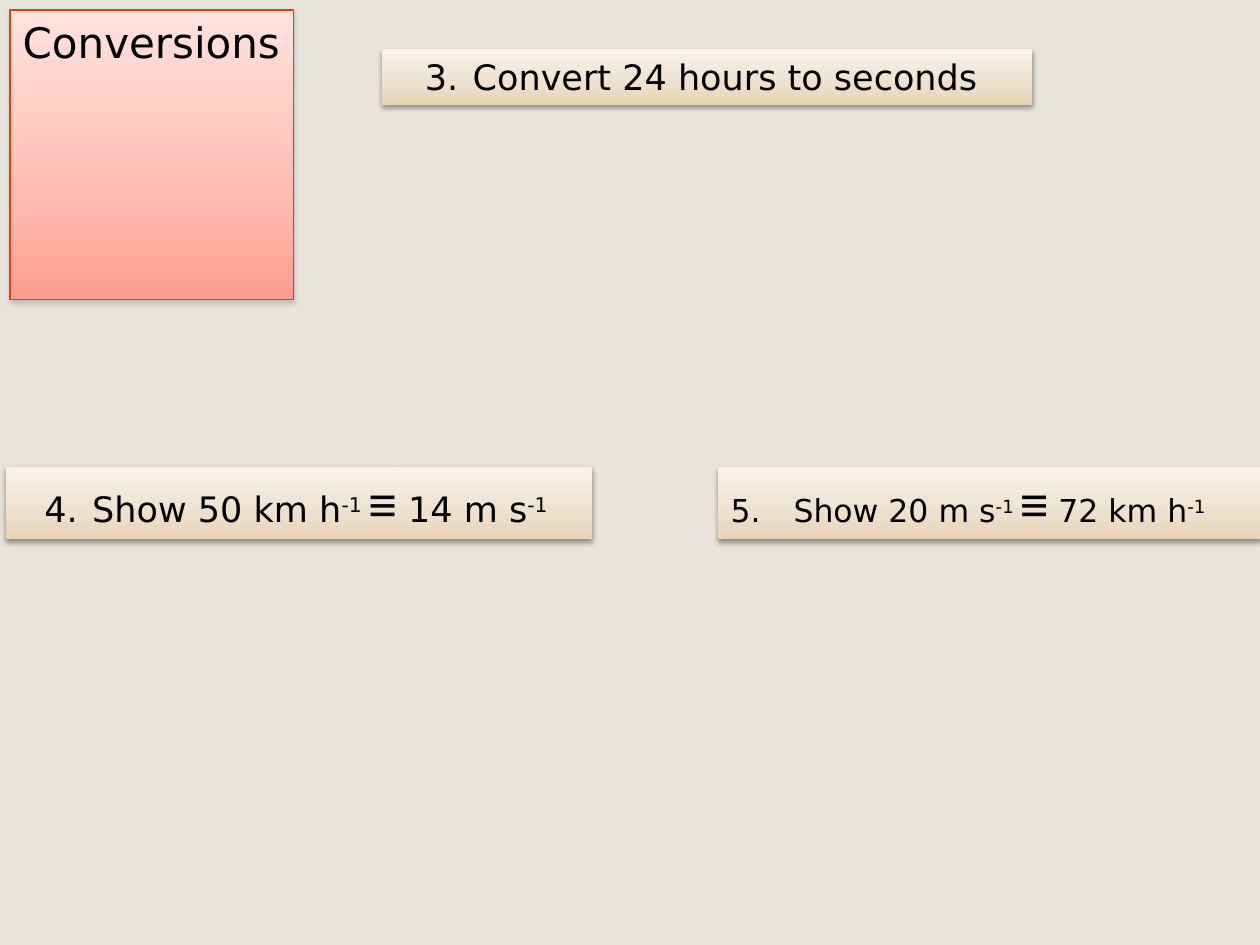
import lxml.etree
import pptx
import pptx.dml.color
import pptx.enum.text
import pptx.oxml.ns
import pptx.util

Inches = pptx.util.Inches
Pt = pptx.util.Pt
Color = pptx.dml.color.RGBColor
Align = pptx.enum.text.PP_ALIGN
Size = pptx.enum.text.MSO_AUTO_SIZE
qn = pptx.oxml.ns.qn

SAND = Color(0xE9, 0xE5, 0xDC)
BLACK = Color(0, 0, 0)
GRAY = Color(0x80, 0x80, 0x80)
RUST = Color(0xD3, 0x44, 0x12)
PINKS = (
    (0, Color(0xFF, 0xE3, 0xDF)),
    (65, Color(0xFF, 0xBA, 0xB1)),
    (100, Color(0xFF, 0x9C, 0x8E)),
)
TANS = (
    (0, Color(0xE7, 0xD4, 0xB7)),
    (35, Color(0xED, 0xE0, 0xCD)),
    (100, Color(0xF9, 0xF3, 0xEB)),
)
FONT = "DejaVu Sans"


def add_node(host, tag, **attrs):
    node = lxml.etree.SubElement(host, qn(tag))
    for name, value in attrs.items():
        node.set(name, str(value))
    return node


def add_tint(host, color, **attrs):
    return add_node(host, "a:srgbClr", val=color, **attrs)


def shade(shape, stops, angle):
    shape.fill.gradient()
    grad = shape.element.spPr.find(qn("a:gradFill"))
    for child in list(grad):
        grad.remove(child)
    group = add_node(grad, "a:gsLst")
    for place, color in stops:
        add_tint(add_node(group, "a:gs", pos=place * 1000), color)
    add_node(grad, "a:lin", ang=angle * 60000, scaled=0)


def add_glow(shape, color):
    shape.shadow.inherit = False
    effect = shape.element.spPr.find(qn("a:effectLst"))
    outer = add_node(effect, "a:outerShdw", blurRad=Pt(3.1), dist=Pt(1.6),
                     dir=90 * 60000, rotWithShape=0)
    add_node(add_tint(outer, color), "a:alpha", val=38000)


def place(shape, box):
    shape.left, shape.top, shape.width, shape.height = map(Inches, box)


def set_frame(shape, wrap):
    frame = shape.text_frame
    frame.word_wrap = wrap
    frame.auto_size = Size.SHAPE_TO_FIT_TEXT
    frame.vertical_anchor = pptx.enum.text.MSO_ANCHOR.TOP
    return frame.paragraphs[0]


def add_run(para, text, size, font=FONT, raised=False):
    run = para.add_run()
    run.text = text
    run.font.name = font
    run.font.size = Pt(size)
    run.font.color.rgb = BLACK
    if raised:
        run._r.get_or_add_rPr().set("baseline", "30000")


def add_title(slide, box):
    title = slide.shapes.title
    place(title, box)
    shade(title, PINKS, 90)
    title.line.color.rgb = RUST
    title.line.width = Pt(0.75)
    add_glow(title, GRAY)
    para = set_frame(title, False)
    para.alignment = Align.LEFT
    add_run(para, "Conversions", 24)


def add_task(slide, box, start, parts, size=20, indent=0.38, align=Align.CENTER):
    task = slide.shapes.add_textbox(*map(Inches, box))
    shade(task, TANS, 270)
    add_glow(task, BLACK)
    para = set_frame(task, True)
    para.alignment = align
    props = para._p.get_or_add_pPr()
    props.set("marL", str(Inches(indent)))
    props.set("indent", str(-Inches(indent)))
    add_node(props, "a:buAutoNum", type="arabicPeriod", startAt=start)
    for text in parts:
        if text == "≡":
            add_run(para, text, 28, "Arial")
        else:
            add_run(para, text, size, raised=text.startswith("-1"))


def main():
    deck = pptx.Presentation()
    deck.slide_width, deck.slide_height = Inches(10), Inches(7.5)
    slide = deck.slides.add_slide(deck.slide_layouts.get_by_name("Title Only"))
    slide.background.fill.solid()
    slide.background.fill.fore_color.rgb = SAND

    add_title(slide, (0.08, 0.08, 2.25, 0.51))
    add_task(slide, (3.03, 0.39, 5.16, 0.44), 3, ["Convert 24 hours to seconds "])
    add_task(slide, (0.05, 3.71, 4.65, 0.57), 4,
             ["Show 50 km h", "-1 ", "≡", " 14 m s", "-1 "])
    add_task(slide, (5.7, 3.71, 4.3, 0.57), 5,
             ["Show 20 m s", "-1 ", "≡", " 72 km h", "-1"],
             size=18, indent=0.5, align=Align.LEFT)
    deck.save("out.pptx")


if __name__ == "__main__":
    main()
